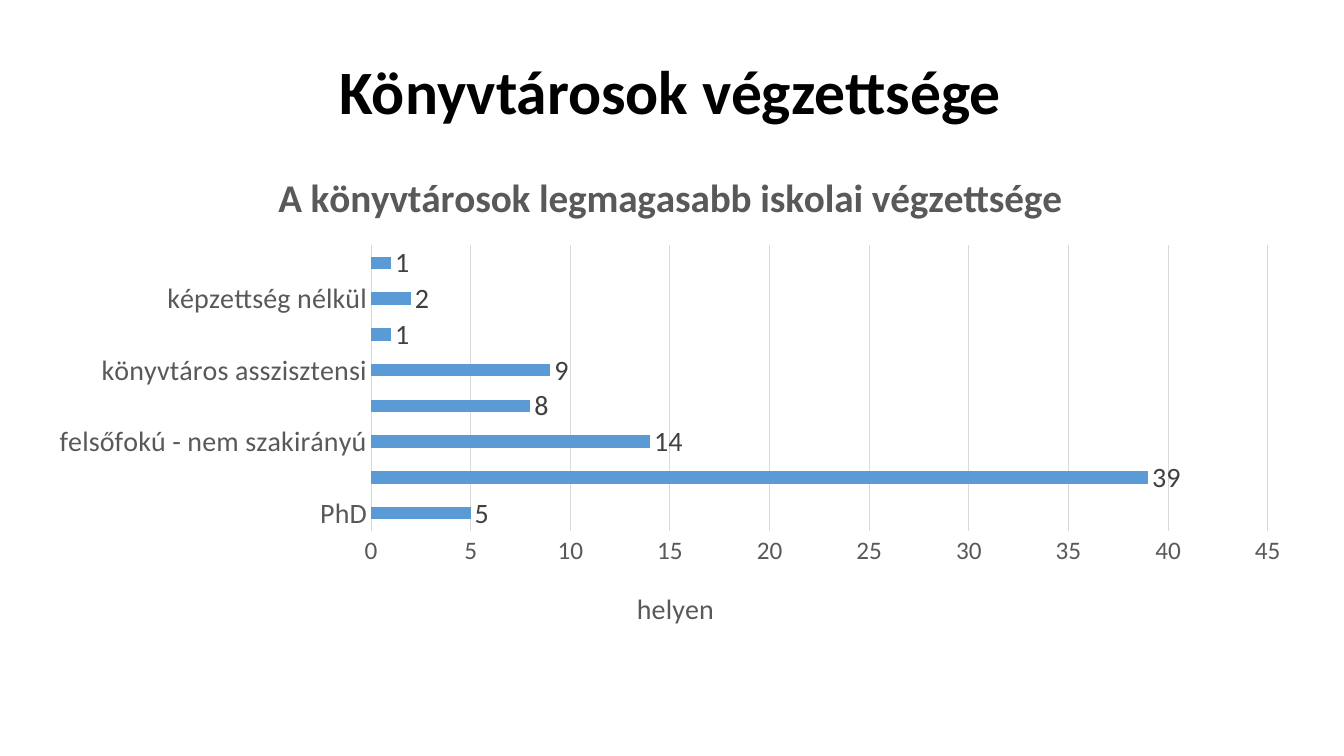
from lxml import etree
from pptx import Presentation
from pptx.chart.data import CategoryChartData
from pptx.dml.color import RGBColor
from pptx.enum.chart import XL_CHART_TYPE as ChartType, XL_LABEL_POSITION as LabelPosition
from pptx.enum.chart import XL_TICK_MARK as TickMark
from pptx.enum.text import MSO_ANCHOR as Anchor, PP_ALIGN as Align
from pptx.oxml.ns import qn
from pptx.util import Cm, Pt

# Content
HEADING = "Könyvtárosok végzettsége"
CHART_TITLE = "A könyvtárosok legmagasabb iskolai végzettsége"
VALUE_TITLE = "helyen"
QUALIFICATIONS = [
    ("PhD", 5),
    ("felsőfokú - szakirányú", 39),
    ("felsőfokú - nem szakirányú", 14),
    ("érettségi", 8),
    ("könyvtáros asszisztensi", 9),
    ("emeltszintű akreditált", 1),
    ("képzettség nélkül", 2),
    ("számítástechnikai szoftverüzemeltető", 1),
]

# Placement: left, top, width, height; layouts are shares of the chart
HEADING_BOX = [Cm(v) for v in (2.29, 0.99, 29.21, 2.77)]
CHART_BOX = [Cm(v) for v in (0.86, 3.76, 32.05, 12.45)]
PLOT_LAYOUT = {"layoutTarget": "inner", "xMode": "edge", "yMode": "edge",
               "x": 0.265, "y": 0.194, "w": 0.705, "h": 0.579}
VALUE_TITLE_LAYOUT = {"xMode": "edge", "yMode": "edge", "x": 0.47, "y": 0.88}


class Theme:
    font = "Calibri"
    ink = RGBColor.from_string("000000")
    muted = RGBColor.from_string("595959")
    label = RGBColor.from_string("404040")
    grid = RGBColor.from_string("D9D9D9")
    bar = RGBColor.from_string("5B9BD5")
    hairline = Pt(0.75)
    heading = {"size": Pt(44), "bold": True}
    chart_title = {"size": Pt(28), "bold": True}
    text = {"size": Pt(20), "bold": False}
    scale = {"size": Pt(18), "bold": False}


def set_font(font, formats, color):
    for name, value in {"name": Theme.font, **formats}.items():
        setattr(font, name, value)
    font.color.rgb = color


def set_line(line):
    line.color.rgb = Theme.grid
    line.width = Theme.hairline


def set_title(title, text, formats):
    frame = title.text_frame
    frame.text = text
    set_font(frame.paragraphs[0].runs[0].font, formats, Theme.muted)


def set_layout(parent, values, before):
    """Place a chart part by hand, ahead of the named child element."""
    for old in parent.findall(qn("c:layout")):
        parent.remove(old)
    layout = etree.Element(qn("c:layout"))
    manual = etree.SubElement(layout, qn("c:manualLayout"))
    for name, value in values.items():
        etree.SubElement(manual, qn(f"c:{name}")).set("val", str(value))
    parent.find(qn(before)).addprevious(layout)


def add_heading(slide):
    frame = slide.shapes.add_textbox(*HEADING_BOX).text_frame
    frame.word_wrap = True
    frame.vertical_anchor = Anchor.MIDDLE
    paragraph = frame.paragraphs[0]
    paragraph.text = HEADING
    paragraph.alignment = Align.CENTER
    paragraph.line_spacing = 0.9
    set_font(paragraph.runs[0].font, Theme.heading, Theme.ink)


def add_qualification_chart(slide):
    data = CategoryChartData()
    data.categories = [name for name, _ in QUALIFICATIONS]
    data.add_series("Series 1", [count for _, count in QUALIFICATIONS])
    chart = slide.shapes.add_chart(ChartType.BAR_CLUSTERED, *CHART_BOX, data).chart
    set_font(chart.font, Theme.text, Theme.muted)
    chart.has_legend = False
    set_title(chart.chart_title, CHART_TITLE, Theme.chart_title)
    chart.chart_title.include_in_layout = False

    # Bars and value labels
    plot = chart.plots[0]
    plot.gap_width = 182
    plot.vary_by_categories = False
    fill = plot.series[0].format.fill
    fill.solid()
    fill.fore_color.rgb = Theme.bar
    plot.has_data_labels = True
    labels = plot.data_labels
    labels.show_value = True
    labels.position = LabelPosition.OUTSIDE_END
    set_font(labels.font, Theme.text, Theme.label)

    # Axes
    categories, values = chart.category_axis, chart.value_axis
    for axis, formats in ((categories, Theme.text), (values, Theme.scale)):
        axis.major_tick_mark = axis.minor_tick_mark = TickMark.NONE
        set_font(axis.tick_labels.font, formats, Theme.muted)
    set_line(categories.format.line)
    values.format.line.fill.background()
    for name, value in {"minimum_scale": 0, "maximum_scale": 45, "major_unit": 5}.items():
        setattr(values, name, value)
    set_line(values.major_gridlines.format.line)
    set_title(values.axis_title, VALUE_TITLE, Theme.text)

    # Manual placement inside the chart
    plot_area = chart.element.find(f".//{qn('c:plotArea')}")
    set_layout(plot_area, PLOT_LAYOUT, "c:barChart")
    value_title = plot_area.find(f"{qn('c:valAx')}/{qn('c:title')}")
    set_layout(value_title, VALUE_TITLE_LAYOUT, "c:overlay")


def main():
    presentation = Presentation()
    presentation.slide_width, presentation.slide_height = Cm(33.87), Cm(19.05)
    slide = presentation.slides.add_slide(presentation.slide_layouts[6])
    add_heading(slide)
    add_qualification_chart(slide)
    presentation.save("out.pptx")


if __name__ == "__main__":
    main()
